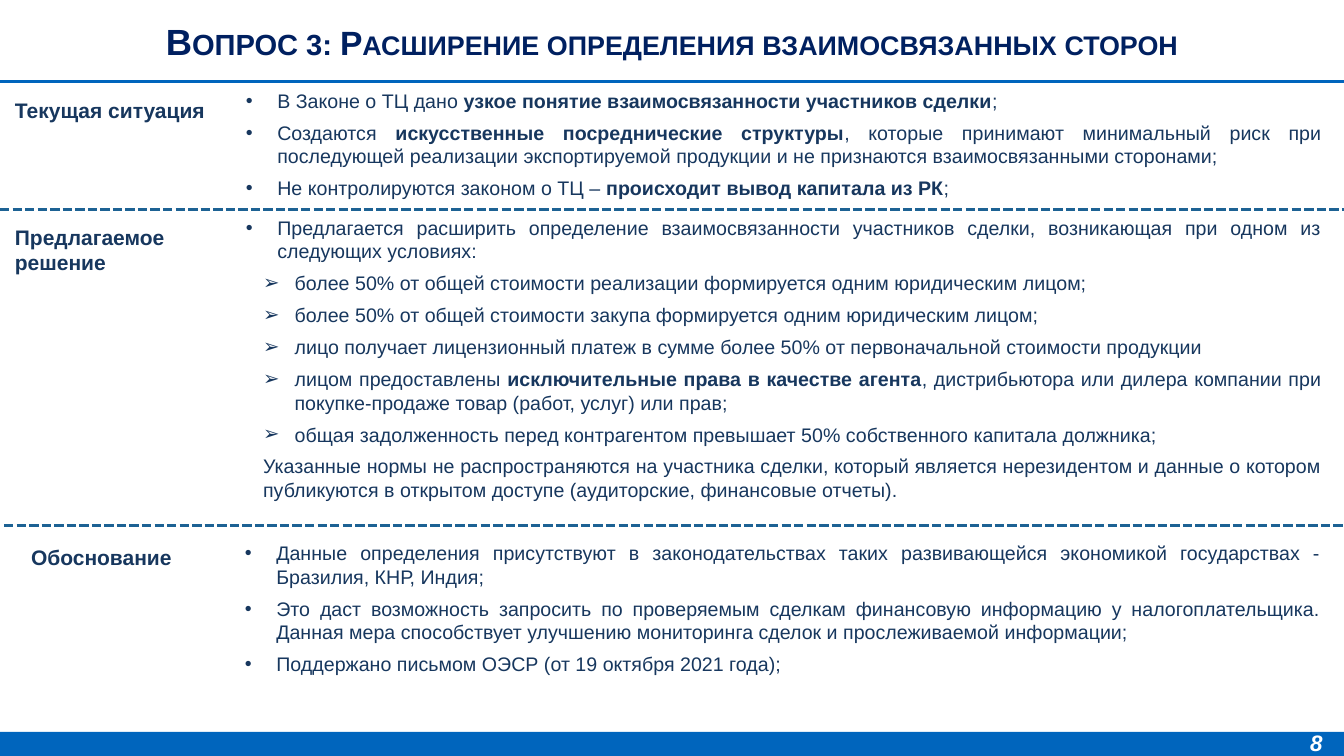
import pptx
import pptx.dml.color
import pptx.enum.dml
import pptx.enum.shapes
import pptx.enum.text
import pptx.oxml
import pptx.oxml.ns
import pptx.util

Pt = pptx.util.Pt
RGBColor = pptx.dml.color.RGBColor
ALIGN = pptx.enum.text.PP_ALIGN
ANCHOR = pptx.enum.text.MSO_ANCHOR

BLUE = RGBColor(0x00, 0x65, 0xBD)
NAVY = RGBColor(0x00, 0x20, 0x60)
INK = RGBColor(0x17, 0x37, 0x5E)
DIVIDER = RGBColor(0x1D, 0x62, 0x94)
WHITE = RGBColor(0xFF, 0xFF, 0xFF)

FONT = "Arial"
WIDTH, HEIGHT = 960, 540
HANG = 22.5
BODY_WIDTH = 782.6

# Body paragraphs are (kind, text); ** switches bold on and off.
# Each kind gives its bullet, left margin, hanging indent and level.
KINDS = {
    "dot": ("•", HANG, -HANG, 0),
    "arrow": ("➢", 34.9, -HANG, 1),
    "plain": (None, 12.4, 0, 1),
}

CURRENT = [
    ("dot", "В Законе о ТЦ дано **узкое понятие взаимосвязанности участников сделки**;"),
    ("dot", "Создаются **искусственные посреднические структуры**, которые принимают "
            "минимальный риск при последующей реализации экспортируемой продукции "
            "и не признаются взаимосвязанными сторонами;"),
    ("dot", "Не контролируются законом о ТЦ – **происходит вывод капитала из РК**;"),
]
PROPOSAL = [
    ("dot", "Предлагается расширить определение взаимосвязанности участников сделки, "
            "возникающая при одном из следующих условиях:"),
    ("arrow", "более 50% от общей стоимости реализации формируется одним юридическим лицом;"),
    ("arrow", "более 50% от общей стоимости закупа формируется одним юридическим лицом;"),
    ("arrow", "лицо получает лицензионный платеж в сумме более 50% "
              "от первоначальной стоимости продукции"),
    ("arrow", "лицом предоставлены **исключительные права в качестве агента**, "
              "дистрибьютора или дилера компании при покупке-продаже товар "
              "(работ, услуг) или прав;"),
    ("arrow", "общая задолженность перед контрагентом превышает 50% "
              "собственного капитала должника;"),
    ("plain", "Указанные нормы не распространяются на участника сделки, который является "
              "нерезидентом и данные о котором публикуются в открытом доступе "
              "(аудиторские, финансовые отчеты)."),
]
RATIONALE = [
    ("dot", "Данные определения присутствуют в законодательствах таких развивающейся "
            "экономикой государствах - Бразилия, КНР, Индия;"),
    ("dot", "Это даст возможность запросить по проверяемым сделкам финансовую информацию "
            "у налогоплательщика. Данная мера способствует улучшению мониторинга сделок "
            "и прослеживаемой информации;"),
    ("dot", "Поддержано письмом ОЭСР (от 19 октября 2021 года);"),
]


def add_span(para, text, size=14, color=INK, bold=False, italic=False, small_caps=False):
    span = para.add_run()
    span.text = text
    font = span.font
    font.name, font.size, font.bold, font.italic = FONT, Pt(size), bold, italic
    font.color.rgb = color
    if small_caps:
        span._r.get_or_add_rPr().set("cap", "small")


def add_box(page, left, top, width, height, anchor=ANCHOR.TOP):
    box = page.shapes.add_textbox(Pt(left), Pt(top), Pt(width), Pt(height))
    box.text_frame.word_wrap = True
    box.text_frame.vertical_anchor = anchor
    return box.text_frame


def add_label(page, text, left, top, width, height, **style):
    para = add_box(page, left, top, width, height).paragraphs[0]
    para.alignment = ALIGN.LEFT
    add_span(para, text, **{"size": 15, "bold": True, **style})


def set_bullet(para, bullet, margin, indent):
    properties = para._p.get_or_add_pPr()
    properties.set("marL", str(Pt(margin)))
    properties.set("indent", str(Pt(indent)))
    if bullet:
        namespace = pptx.oxml.ns.nsdecls("a")
        for tag in (f'<a:buFont {namespace} typeface="{FONT}"/>',
                    f'<a:buChar {namespace} char="{bullet}"/>'):
            properties.append(pptx.oxml.parse_xml(tag))


def add_body(page, items, left, top, height):
    frame = add_box(page, left, top, BODY_WIDTH, height)
    for index, (kind, text) in enumerate(items):
        para = frame.add_paragraph() if index else frame.paragraphs[0]
        bullet, margin, indent, para.level = KINDS[kind]
        para.alignment = ALIGN.JUSTIFY
        para.space_before = Pt(6)
        set_bullet(para, bullet, margin, indent)
        for position, part in enumerate(text.split("**")):
            add_span(para, part, bold=position % 2 == 1)


def add_rule(page, left, top, color, dashed=False):
    rule = page.shapes.add_connector(
        pptx.enum.shapes.MSO_CONNECTOR.STRAIGHT,
        Pt(left), Pt(top), Pt(left + WIDTH), Pt(top))
    rule.line.color.rgb = color
    rule.line.width = Pt(2.25)
    if dashed:
        # SQUARE_DOT is the sysDash preset
        rule.line.dash_style = pptx.enum.dml.MSO_LINE.SQUARE_DOT
    rule._element.spPr.append(
        pptx.oxml.parse_xml(f'<a:effectLst {pptx.oxml.ns.nsdecls("a")}/>'))


def add_footer(page):
    bar = page.shapes.add_shape(
        pptx.enum.shapes.MSO_SHAPE.RECTANGLE, 0, Pt(522.7), Pt(WIDTH), Pt(17.3))
    bar.shadow.inherit = False
    bar.fill.solid()
    bar.fill.fore_color.rgb = BLUE
    bar.line.fill.background()
    add_label(page, "8", 928.8, 517, 38.9, 26.6, size=16, color=WHITE, italic=True)


def add_title(page):
    para = add_box(page, 9.4, 0.7, 941, 56.9, ANCHOR.MIDDLE).paragraphs[0]
    para.alignment = ALIGN.CENTER
    style = {"color": NAVY, "bold": True, "small_caps": True}
    add_span(para, "Вопрос 3: ", size=26, **style)
    add_span(para, "Расширение определения взаимосвязанных сторон", size=24, **style)


def main():
    deck = pptx.Presentation()
    deck.slide_width, deck.slide_height = Pt(WIDTH), Pt(HEIGHT)
    page = deck.slides.add_slide(deck.slide_layouts[6])

    # Frame of the page
    add_footer(page)
    add_rule(page, 0, 58.5, BLUE)
    add_title(page)

    # Current situation
    add_label(page, "Текущая ситуация", 3.6, 66.2, 192, 25.4)
    add_body(page, CURRENT, 168.5, 59.8, 87.2)
    add_rule(page, 0, 149.6, DIVIDER, dashed=True)

    # Proposed solution
    add_label(page, "Предлагаемое решение", 3.6, 157, 147, 43.6)
    add_body(page, PROPOSAL, 168.5, 150.5, 213)
    add_rule(page, 2.9, 375.1, DIVIDER, dashed=True)

    # Rationale
    add_label(page, "Обоснование", 15.1, 385.2, 141, 25.4)
    add_body(page, RATIONALE, 167.8, 383, 104.2)

    deck.save("out.pptx")


if __name__ == "__main__":
    main()
